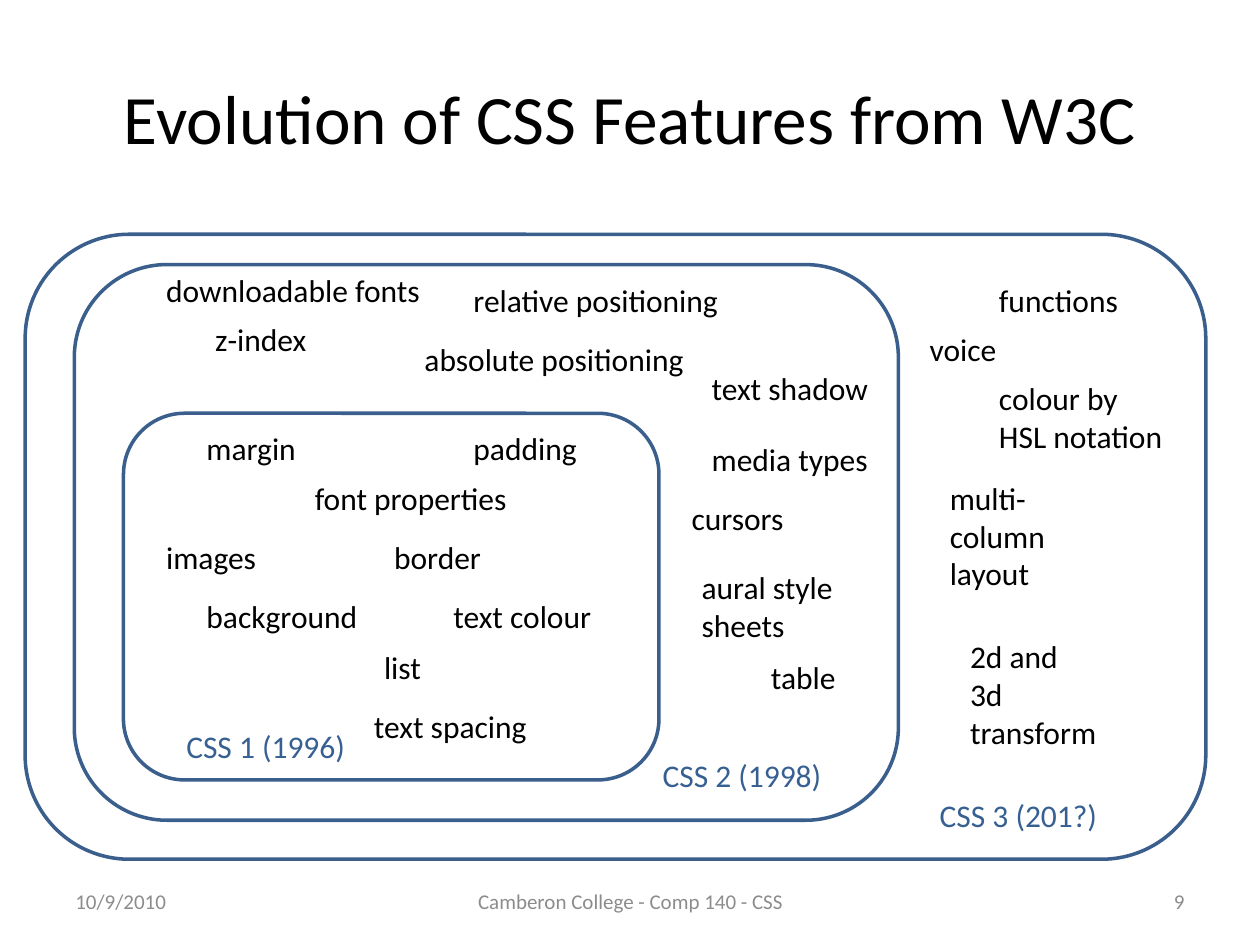
from dataclasses import dataclass

from pptx import Presentation
from pptx.dml.color import RGBColor
from pptx.enum import shapes, text
from pptx.util import Inches, Pt


@dataclass(frozen=True)
class Theme:
    font: str = "Calibri"
    ink: RGBColor = RGBColor(0x00, 0x00, 0x00)
    outline: RGBColor = RGBColor(0x3A, 0x5F, 0x8C)
    version: RGBColor = RGBColor(0x37, 0x60, 0x92)
    footer: RGBColor = RGBColor(0x8C, 0x8C, 0x8C)
    title_size: float = 39.6
    body_size: float = 18
    footer_size: float = 12
    outline_width: float = 2


@dataclass(frozen=True)
class Box:
    left: float
    top: float
    width: float
    height: float = 0.4

    def lengths(self) -> tuple:
        return tuple(map(Inches, (self.left, self.top, self.width, self.height)))


@dataclass(frozen=True)
class Label:
    words: str
    box: Box


@dataclass(frozen=True)
class Level:
    frame: Box
    version: Label
    features: tuple[Label, ...]


THEME = Theme()
LEFT, CENTER, RIGHT = text.PP_ALIGN.LEFT, text.PP_ALIGN.CENTER, text.PP_ALIGN.RIGHT

# Each CSS level: its frame, its version label and the features it added.
# In feature labels, \n starts a paragraph and \v breaks a line.
LEVELS = (
    Level(
        Box(0.98, 3.28, 4.25, 2.91),
        Label("CSS 1 (1996)", Box(1.38, 5.72, 1.48)),
        (
            Label("margin", Box(1.54, 3.36, 0.92)),
            Label("padding", Box(3.66, 3.36, 1.03)),
            Label("font properties", Box(2.4, 3.75, 1.74)),
            Label("images", Box(1.22, 4.22, 0.92)),
            Label("border", Box(3.03, 4.22, 0.9)),
            Label("background", Box(1.54, 4.69, 1.41)),
            Label("text colour", Box(3.5, 4.69, 1.31)),
            Label("list", Box(2.95, 5.09, 0.5)),
            Label("text spacing", Box(2.87, 5.56, 1.43)),
        ),
    ),
    Level(
        Box(0.59, 2.1, 6.54, 4.41),
        Label("CSS 2 (1998)", Box(5.16, 5.95, 1.48)),
        (
            Label("downloadable fonts", Box(1.22, 2.1, 2.24)),
            Label("relative positioning", Box(3.66, 2.18, 2.17)),
            Label("z-index", Box(1.61, 2.49, 0.93)),
            Label("absolute positioning", Box(3.27, 2.65, 2.28)),
            Label("text shadow", Box(5.55, 2.88, 1.46)),
            Label("media types", Box(5.55, 3.44, 1.46)),
            Label("cursors", Box(5.39, 3.91, 0.94)),
            Label("aural style\nsheets", Box(5.47, 4.46, 1.25, 0.71)),
            Label("table", Box(6.02, 5.17, 0.72)),
        ),
    ),
    Level(
        Box(0.2, 1.86, 9.37, 4.96),
        Label("CSS 3 (201?)", Box(7.36, 6.27, 1.47)),
        (
            Label("functions", Box(7.83, 2.18, 1.16)),
            Label("voice", Box(7.28, 2.57, 0.74)),
            Label("colour by\vHSL notation", Box(7.83, 2.96, 1.51, 0.71)),
            Label("multi-\vcolumn\vlayout", Box(7.44, 3.75, 0.97, 1.01)),
            Label("2d and \v3d \vtransform", Box(7.6, 5.01, 1.21, 1.01)),
        ),
    ),
)

TITLE = Label("Evolution of CSS Features from W3C", Box(0.5, 0.3, 9, 1.25))
FOOTERS = (
    (Label("10/9/2010", Box(0.5, 6.95, 2.33)), LEFT),
    (Label("Camberon College - Comp 140 - CSS", Box(3.42, 6.95, 3.17)), CENTER),
    (Label("9", Box(7.17, 6.95, 2.33)), RIGHT),
)


def add_label(slide, label: Label, size: float, color: RGBColor):
    """Add a text box that fits its words, and return its text frame."""
    frame = slide.shapes.add_textbox(*label.box.lengths()).text_frame
    frame.word_wrap = False
    frame.auto_size = text.MSO_AUTO_SIZE.SHAPE_TO_FIT_TEXT
    frame.text = label.words
    for paragraph in frame.paragraphs:
        paragraph.alignment = LEFT
        paragraph.font.name = THEME.font
        paragraph.font.size = Pt(size)
        paragraph.font.color.rgb = color
    return frame


def add_banner(slide, label: Label, size: float, color: RGBColor, align) -> None:
    """Add a label aligned within a box of fixed size."""
    frame = add_label(slide, label, size, color)
    frame.auto_size = text.MSO_AUTO_SIZE.NONE
    frame.word_wrap = True
    frame.vertical_anchor = text.MSO_ANCHOR.MIDDLE
    frame.paragraphs[0].alignment = align


def add_level(slide, level: Level) -> None:
    outline = slide.shapes.add_shape(
        shapes.MSO_SHAPE.FLOWCHART_ALTERNATE_PROCESS, *level.frame.lengths()
    )
    outline.shadow.inherit = False
    outline.fill.background()
    outline.line.color.rgb = THEME.outline
    outline.line.width = Pt(THEME.outline_width)
    for feature in level.features:
        add_label(slide, feature, THEME.body_size, THEME.ink)
    add_label(slide, level.version, THEME.body_size, THEME.version)


def main() -> None:
    deck = Presentation()
    deck.slide_width, deck.slide_height = Inches(10), Inches(7.5)
    slide = deck.slides.add_slide(deck.slide_layouts[6])

    # Title
    add_banner(slide, TITLE, THEME.title_size, THEME.ink, CENTER)

    # Nested CSS levels
    for level in LEVELS:
        add_level(slide, level)

    # Footer
    for label, align in FOOTERS:
        add_banner(slide, label, THEME.footer_size, THEME.footer, align)

    deck.save("out.pptx")


if __name__ == "__main__":
    main()
